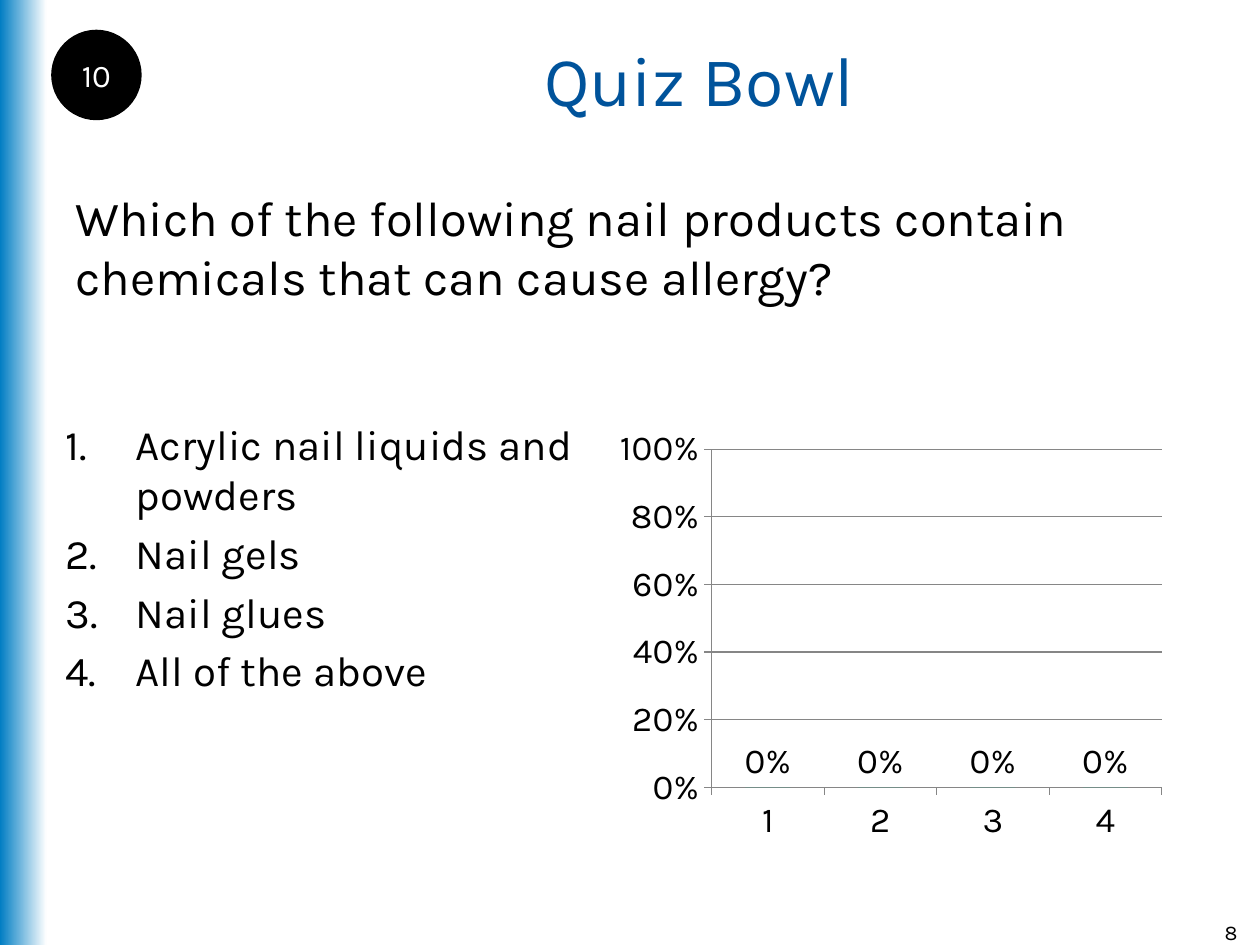
import pptx
import pptx.chart.data
import pptx.dml.color
import pptx.enum.chart
import pptx.enum.shapes
import pptx.enum.text
import pptx.util
from dataclasses import dataclass
from lxml import etree
from pptx.oxml.ns import qn

Inches = pptx.util.Inches
Pt = pptx.util.Pt
Align = pptx.enum.text.PP_ALIGN
Anchor = pptx.enum.text.MSO_ANCHOR
Shape = pptx.enum.shapes.MSO_SHAPE
FONT = "Karla"


@dataclass
class Label:
    left: float
    top: float
    width: float
    height: float
    text: str
    size: int
    color: str = "000000"
    align: Align = Align.LEFT
    anchor: Anchor = Anchor.TOP
    listed: bool = False


LABELS = [
    Label(9.42, 7.25, 0.5, 0.25, "8", 12, align=Align.RIGHT),
    Label(0.5, 1.44, 9.17, 0.75,
          "Which of the following nail products contain chemicals that can cause allergy?", 28),
    Label(0.42, 3.27, 4.48, 3.67,
          "Acrylic nail liquids and powders\nNail gels\nNail glues\nAll of the above",
          24, listed=True),
    Label(0.76, 0, 9.58, 1.25, "Quiz Bowl", 40, "00539B", Align.CENTER, Anchor.MIDDLE),
]


def tint(code: str) -> pptx.dml.color.RGBColor:
    return pptx.dml.color.RGBColor.from_string(code)


def style(font, size: int, color: str) -> None:
    font.name = FONT
    font.size = Pt(size)
    font.color.rgb = tint(color)


def number(para) -> None:
    props = para._p.get_or_add_pPr()
    props.set("marL", str(Inches(0.56)))
    props.set("indent", str(-Inches(0.56)))
    etree.SubElement(props, qn("a:buFont"), typeface="+mj-lt")
    etree.SubElement(props, qn("a:buAutoNum"), type="arabicPeriod")


def write(frame, text: str, size: int, color: str, align: Align, listed: bool = False) -> None:
    frame.text = text
    for rank, para in enumerate(frame.paragraphs):
        para.alignment = align
        if rank:
            para.space_before = Pt(size * 0.2)
        if listed:
            number(para)
        for run in para.runs:
            style(run.font, size, color)


def add_label(slide, label: Label) -> None:
    box = slide.shapes.add_textbox(Inches(label.left), Inches(label.top),
                                   Inches(label.width), Inches(label.height))
    frame = box.text_frame
    frame.word_wrap = True
    frame.vertical_anchor = label.anchor
    write(frame, label.text, label.size, label.color, label.align, label.listed)


def add_band(slide) -> None:
    band = slide.shapes.add_shape(Shape.RECTANGLE, 0, 0, Inches(0.37), Inches(7.5))
    band.shadow.inherit = False
    band.line.fill.background()
    band.fill.gradient()
    band.fill.gradient_angle = 0
    for stop, code in zip(band.fill.gradient_stops, ("007DC3", "FFFFFF")):
        stop.color.rgb = tint(code)


def add_timer(slide) -> None:
    disc = slide.shapes.add_shape(Shape.OVAL, Inches(0.42), Inches(0.25),
                                  Inches(0.69), Inches(0.69))
    disc.shadow.inherit = False
    disc.fill.solid()
    disc.fill.fore_color.rgb = tint("000000")
    disc.line.color.rgb = tint("000000")
    disc.line.width = Pt(2)
    frame = disc.text_frame
    frame.margin_left = frame.margin_right = frame.margin_top = frame.margin_bottom = 0
    frame.word_wrap = False
    frame.vertical_anchor = Anchor.MIDDLE
    write(frame, "10", 18, "FFFFFF", Align.CENTER)


def rule(line) -> None:
    line.color.rgb = tint("868686")
    line.width = Pt(0.75)


def add_votes(slide) -> None:
    data = pptx.chart.data.CategoryChartData(number_format="0%")
    data.categories = ["1", "2", "3", "4"]
    data.add_series("Series 1", [0, 0, 0, 0])
    chart = slide.shapes.add_chart(
        pptx.enum.chart.XL_CHART_TYPE.COLUMN_CLUSTERED,
        Inches(4.83), Inches(3.33), Inches(4.48), Inches(3.42), data).chart
    style(chart.font, 20, "000000")
    chart.has_legend = False
    chart.has_title = False
    for axis in (chart.category_axis, chart.value_axis):
        axis.major_tick_mark = pptx.enum.chart.XL_TICK_MARK.OUTSIDE
        rule(axis.format.line)
    axis = chart.value_axis
    axis.minimum_scale = 0
    axis.maximum_scale = 1
    axis.major_unit = 0.2
    axis.has_major_gridlines = True
    rule(axis.major_gridlines.format.line)
    axis.tick_labels.number_format = "0%"
    axis.tick_labels.number_format_is_linked = False
    plot = chart.plots[0]
    plot.gap_width = 150
    plot.vary_by_categories = False
    bars = plot.series[0]
    bars.format.fill.solid()
    bars.format.fill.fore_color.rgb = tint("00CC99")
    tags = bars.data_labels
    tags.show_value = True
    tags.number_format = "0%"
    tags.number_format_is_linked = False
    tags.position = pptx.enum.chart.XL_LABEL_POSITION.OUTSIDE_END
    style(tags.font, 20, "000000")


def main() -> None:
    deck = pptx.Presentation()
    deck.slide_width = Inches(10)
    deck.slide_height = Inches(7.5)
    slide = deck.slides.add_slide(deck.slide_layouts[6])
    add_band(slide)
    for label in LABELS:
        add_label(slide, label)
    add_votes(slide)
    add_timer(slide)
    deck.save("out.pptx")


if __name__ == "__main__":
    main()
